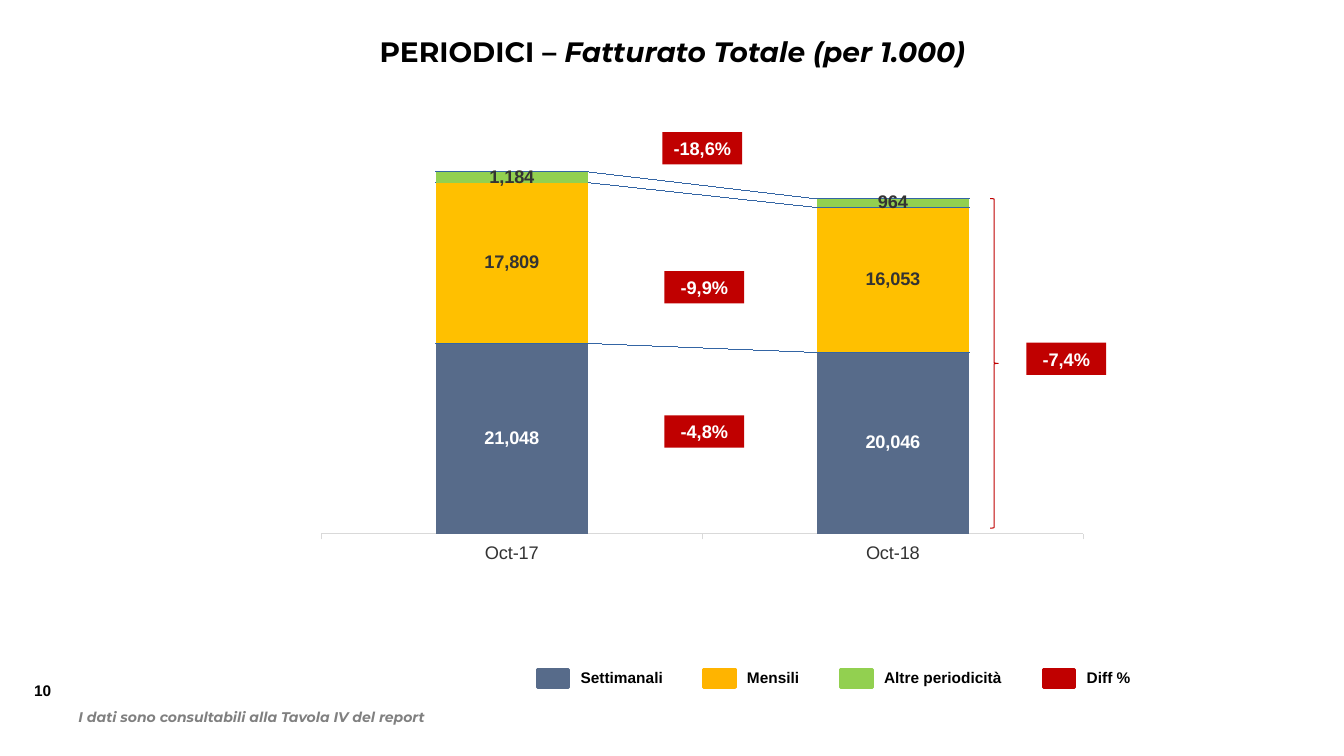
"""Build the slide on total turnover of periodicals."""
from dataclasses import dataclass

from pptx import Presentation
from pptx.chart.data import CategoryChartData
from pptx.dml.color import RGBColor
from pptx.enum.chart import XL_CHART_TYPE, XL_LABEL_POSITION, XL_TICK_LABEL_POSITION, XL_TICK_MARK
from pptx.enum.shapes import MSO_SHAPE
from pptx.enum.text import MSO_ANCHOR, PP_ALIGN
from pptx.oxml import parse_xml
from pptx.oxml.ns import nsdecls
from pptx.util import Emu, Pt

STACKED = XL_CHART_TYPE.COLUMN_STACKED
LABEL_CENTER = XL_LABEL_POSITION.CENTER
LABELS_LOW = XL_TICK_LABEL_POSITION.LOW
TICK_OUTSIDE, TICK_NONE = XL_TICK_MARK.OUTSIDE, XL_TICK_MARK.NONE
RECTANGLE, RIGHT_BRACE = MSO_SHAPE.RECTANGLE, MSO_SHAPE.RIGHT_BRACE
LEFT, CENTER = PP_ALIGN.LEFT, PP_ALIGN.CENTER
TOP, MIDDLE = MSO_ANCHOR.TOP, MSO_ANCHOR.MIDDLE

EMU_PER_PX = 9144
BLACK, WHITE, DARK, GREY = "000000", "FFFFFF", "333333", "808080"
SLATE, YELLOW, GREEN, RED = "576B8A", "FFC000", "92D050", "C00000"
AMBER, AXIS_GREY, LINK_BLUE = "FFB400", "D9D9D9", "3465A4"
PLOT_AREA = {"x": 0.095, "y": 0.037, "w": 0.88, "h": 0.78}


@dataclass(frozen=True)
class Box:
    left: int
    top: int
    width: int
    height: int

    def emu(self) -> tuple:
        return tuple(px(side) for side in (self.left, self.top, self.width, self.height))


@dataclass(frozen=True)
class LegendEntry:
    text: str
    left: int
    label_width: int
    color: str


@dataclass(frozen=True)
class Badge:
    text: str
    left: int
    top: int


@dataclass(frozen=True)
class Series:
    name: str
    values: tuple
    color: str
    label_color: str


LEGEND = (
    LegendEntry("Settimanali", 533, 114, SLATE),
    LegendEntry("Mensili", 698, 81, AMBER),
    LegendEntry("Altre periodicità", 834, 164, GREEN),
    LegendEntry("Diff %", 1035, 71, RED),
)
BADGES = (
    Badge("-7,4%", 1018, 340),
    Badge("-18,6%", 657, 131),
    Badge("-9,9%", 659, 269),
    Badge("-4,8%", 659, 412),
)
SERIES = (
    Series("Settimanali", (21048, 20046), SLATE, WHITE),
    Series("Mensili", (17809, 16053), YELLOW, DARK),
    Series("Altre periodicità", (1184, 964), GREEN, DARK),
)


def px(length: int) -> Emu:
    """Turn px into EMU."""
    return Emu(length * EMU_PER_PX)


def rgb(color: str) -> RGBColor:
    """Turn a hex string into a colour."""
    return RGBColor.from_string(color)


def style_font(font, size: int, color: str, name: str = "Arial",
               bold: bool = True, italic: bool = False) -> None:
    """Set all the properties of a font."""
    font.size, font.name = Pt(size), name
    font.bold, font.italic = bold, italic
    font.color.rgb = rgb(color)


def write_text(shape, text: str, *, size: int, color: str = BLACK, name: str = "Arial",
               italic: bool = False, align=LEFT, anchor=TOP, wrap: bool = True) -> None:
    """Append a formatted run to the first paragraph of a shape."""
    frame = shape.text_frame
    frame.word_wrap, frame.vertical_anchor = wrap, anchor
    paragraph = frame.paragraphs[0]
    paragraph.alignment = align
    run = paragraph.add_run()
    run.text = text
    style_font(run.font, size, color, name, italic=italic)


def add_text(slide, box: Box, text: str, **text_format):
    """Add a text box with one run."""
    shape = slide.shapes.add_textbox(*box.emu())
    write_text(shape, text, **text_format)
    return shape


def add_shape(slide, kind, box: Box, *, fill: str = "", line: str = "",
              line_width: float = 0.75):
    """Add a flat preset shape."""
    shape = slide.shapes.add_shape(kind, *box.emu())
    shape.shadow.inherit = False
    if fill:
        shape.fill.solid()
        shape.fill.fore_color.rgb = rgb(fill)
    else:
        shape.fill.background()
    if line:
        shape.line.color.rgb = rgb(line)
        shape.line.width = Pt(line_width)
    else:
        shape.line.fill.background()
    return shape


def add_legend_entry(slide, entry: LegendEntry) -> None:
    """Add a colour key and its label."""
    add_shape(slide, RECTANGLE, Box(entry.left, 664, 31, 18),
              fill=entry.color, line=entry.color, line_width=2.25)
    add_text(slide, Box(entry.left + 33, 658, entry.label_width, 29), entry.text, size=11)


def add_badge(slide, badge: Badge) -> None:
    """Add a red box with a percentage change."""
    shape = add_shape(slide, RECTANGLE, Box(badge.left, badge.top, 79, 32), fill=RED)
    write_text(shape, badge.text, size=13, color=WHITE, align=CENTER, anchor=MIDDLE)


def place_plot(chart) -> None:
    """Fix the inner plot area and link the stacked columns with lines."""
    places = "".join(f'<c:{side} val="{value}"/>' for side, value in PLOT_AREA.items())
    layout = parse_xml(
        f'<c:layout {nsdecls("c")}><c:manualLayout><c:layoutTarget val="inner"/>'
        f'<c:xMode val="edge"/><c:yMode val="edge"/>{places}</c:manualLayout></c:layout>')
    plot_area = chart.plots[0]._element.getparent()
    for old_layout in plot_area.findall(layout.tag):
        plot_area.remove(old_layout)
    plot_area.insert(0, layout)
    series_lines = parse_xml(
        f'<c:serLines {nsdecls("c", "a")}><c:spPr><a:ln w="9525"><a:solidFill>'
        f'<a:srgbClr val="{LINK_BLUE}"/></a:solidFill></a:ln></c:spPr></c:serLines>')
    chart.plots[0]._element.find(layout.tag.replace("layout", "overlap")).addnext(series_lines)


def add_turnover_chart(slide, box: Box) -> None:
    """Add the stacked column chart."""
    data = CategoryChartData(number_format="#,##0")
    data.categories = ("Oct-17", "Oct-18")
    for series in SERIES:
        data.add_series(series.name, series.values)
    chart = slide.shapes.add_chart(STACKED, *box.emu(), data).chart
    chart.has_title = chart.has_legend = False
    style_font(chart.font, 13, BLACK, bold=False)
    plot = chart.plots[0]
    plot.gap_width, plot.overlap = 150, 100
    plot.vary_by_categories = False
    for series, drawn in zip(SERIES, plot.series):
        drawn.format.fill.solid()
        drawn.format.fill.fore_color.rgb = rgb(series.color)
        labels = drawn.data_labels
        labels.show_value, labels.position = True, LABEL_CENTER
        labels.number_format, labels.number_format_is_linked = "#,##0", False
        style_font(labels.font, 13, series.label_color)
    months, amounts = chart.category_axis, chart.value_axis
    months.major_tick_mark, months.minor_tick_mark = TICK_OUTSIDE, TICK_NONE
    months.tick_label_position = LABELS_LOW
    months.format.line.color.rgb = rgb(AXIS_GREY)
    months.format.line.width = Pt(0.75)
    style_font(months.tick_labels.font, 13, DARK, bold=False)
    amounts.minimum_scale, amounts.maximum_scale = 0, 45000
    amounts.has_major_gridlines = amounts.visible = False
    place_plot(chart)


def main() -> None:
    """Build and save the slide."""
    presentation = Presentation()
    presentation.slide_width, presentation.slide_height = px(1333), px(750)
    slide = presentation.slides.add_slide(presentation.slide_layouts[6])
    add_text(slide, Box(24, 671, 42, 29), "10", size=11, wrap=False)
    title = add_text(slide, Box(167, 29, 1000, 44), "PERIODICI – ",
                     size=20, name="Montserrat", align=CENTER)
    write_text(title, "Fatturato Totale (per 1.000)",
               size=20, name="Montserrat", italic=True, align=CENTER)
    for entry in LEGEND:
        add_legend_entry(slide, entry)
    add_turnover_chart(slide, Box(237, 107, 859, 517))
    add_shape(slide, RIGHT_BRACE, Box(982, 197, 8, 327), line=RED)
    for badge in BADGES:
        add_badge(slide, badge)
    add_text(slide, Box(68, 698, 386, 27), "I dati sono consultabili alla Tavola IV del report",
             size=10, color=GREY, name="Montserrat", italic=True)
    presentation.save("out.pptx")


if __name__ == "__main__":
    main()
